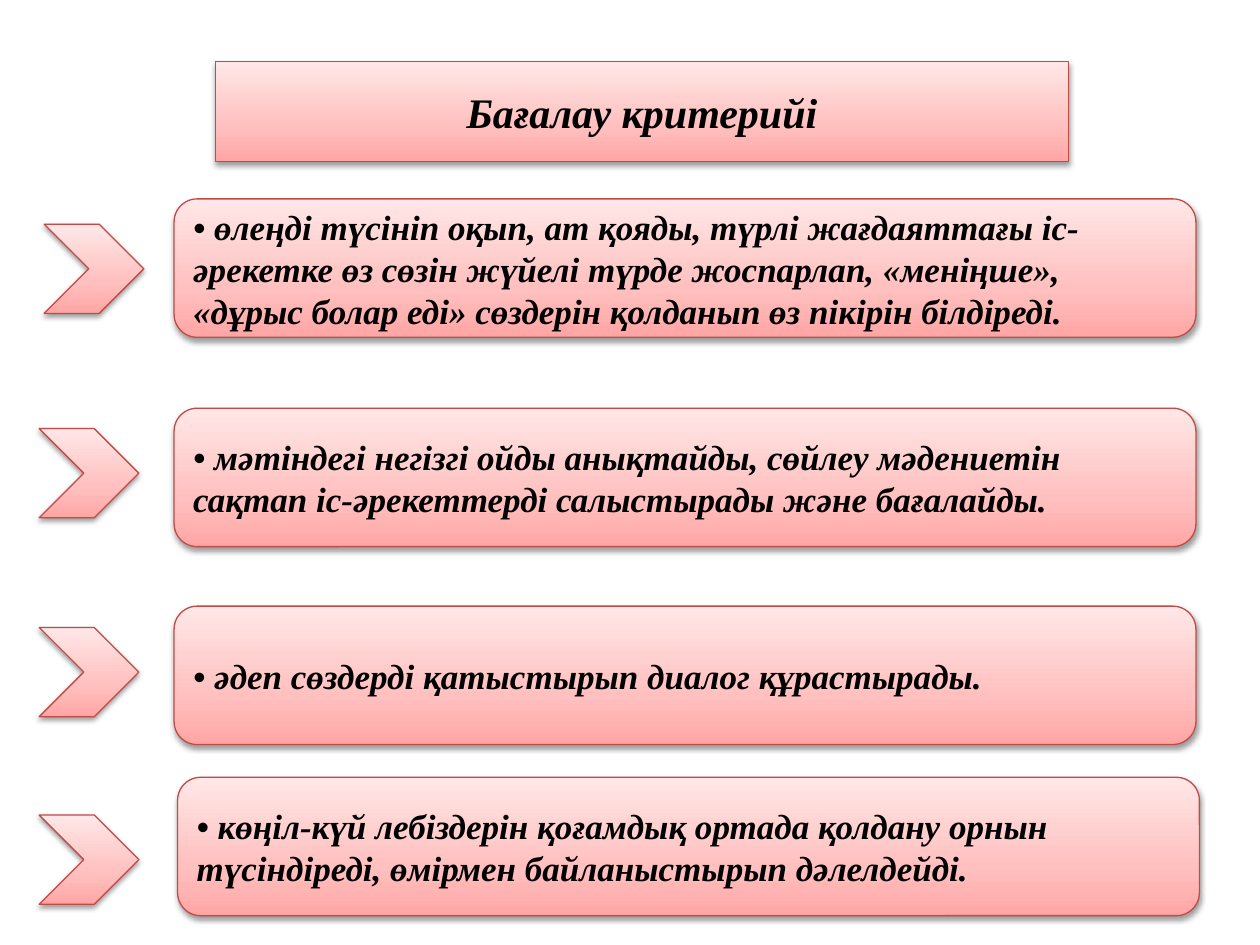
from dataclasses import dataclass

from lxml import etree
from pptx import Presentation
from pptx.dml.color import RGBColor
from pptx.enum.shapes import MSO_SHAPE
from pptx.enum.text import MSO_ANCHOR, PP_ALIGN
from pptx.oxml import parse_xml
from pptx.oxml.ns import nsdecls, qn
from pptx.util import Cm, Pt

CHEVRON, ROUNDED = MSO_SHAPE.CHEVRON, MSO_SHAPE.ROUNDED_RECTANGLE
MIDDLE = MSO_ANCHOR.MIDDLE
LEFT, CENTER = PP_ALIGN.LEFT, PP_ALIGN.CENTER
TITLE_ONLY = 5


@dataclass(frozen=True)
class Theme:
    font: str = "Times New Roman"
    title_size: int = 24
    body_size: int = 20
    text: str = "000000"
    line: str = "BF4C48"
    line_width: float = 0.75
    # Gradient stops from bottom to top: percent, colour
    stops: tuple = ((0, "FFA6A5"), (35, "FFC0BF"), (100, "FFE7E7"))


THEME = Theme()
TITLE = "Бағалау критерийі"
BOX_W, BOX_H = Cm(20.6), Cm(2.79)
CHEVRON_W, CHEVRON_H = Cm(2.01), Cm(1.8)

# Chevron left and top, box left and top (cm), text
CRITERIA = [
    (0.89, 4.52, 3.51, 4.01,
     "• өлеңді түсініп оқып, ат қояды, түрлі жағдаяттағы іс-әрекетке өз сөзін "
     "жүйелі түрде жоспарлап, «меніңше», «дұрыс болар еді» сөздерін қолданып "
     "өз пікірін білдіреді."),
    (0.79, 8.64, 3.51, 8.23,
     "• мәтіндегі негізгі ойды анықтайды, сөйлеу мәдениетін сақтап "
     "іс-әрекеттерді салыстырады және бағалайды."),
    (0.79, 12.65, 3.51, 12.22,
     "• әдеп сөздерді қатыстырып диалог құрастырады."),
    (0.79, 16.43, 3.58, 15.67,
     "• көңіл-күй лебіздерін қоғамдық ортада қолдану орнын түсіндіреді, "
     "өмірмен байланыстырып дәлелдейді."),
]


def style_shape(sp):
    """Give a shape the pink gradient, red outline and soft shadow."""
    sp.fill.gradient()
    sp.fill.gradient_angle = 90
    spPr = sp._element.spPr
    stops = spPr.find(qn("a:gradFill")).find(qn("a:gsLst"))
    for stop in list(stops):
        stops.remove(stop)
    for percent, color in THEME.stops:
        stop = etree.SubElement(stops, qn("a:gs"), pos=str(percent * 1000))
        etree.SubElement(stop, qn("a:srgbClr"), val=color)

    sp.line.color.rgb = RGBColor.from_string(THEME.line)
    sp.line.width = Pt(THEME.line_width)

    sp.shadow.inherit = False
    spPr.find(qn("a:effectLst")).append(parse_xml(
        f'<a:outerShdw {nsdecls("a")} blurRad="40000" dist="20000" '
        'dir="5400000" rotWithShape="0"><a:srgbClr val="000000">'
        '<a:alpha val="38000"/></a:srgbClr></a:outerShdw>'))


def write_text(sp, text, size, align):
    tf = sp.text_frame
    tf.word_wrap = True
    tf.vertical_anchor = MIDDLE
    p = tf.paragraphs[0]
    p.text = text
    p.alignment = align
    p.font.name = THEME.font
    p.font.size = Pt(size)
    p.font.bold = p.font.italic = True
    p.font.color.rgb = RGBColor.from_string(THEME.text)


def format_title(sp):
    """Turn the title placeholder into a scroll banner."""
    sp.left, sp.top, sp.width, sp.height = Cm(4.34), Cm(1.24), Cm(17.2), Cm(2.01)
    sp._element.spPr.append(parse_xml(
        f'<a:prstGeom {nsdecls("a")} prst="horizontalScroll"><a:avLst/></a:prstGeom>'))
    style_shape(sp)
    write_text(sp, TITLE, THEME.title_size, CENTER)


def add_chevron(slide, left, top):
    sp = slide.shapes.add_shape(CHEVRON, left, top, CHEVRON_W, CHEVRON_H)
    style_shape(sp)


def add_box(slide, left, top, text):
    sp = slide.shapes.add_shape(ROUNDED, left, top, BOX_W, BOX_H)
    style_shape(sp)
    write_text(sp, text, THEME.body_size, LEFT)


def main():
    prs = Presentation()
    prs.slide_width, prs.slide_height = Cm(25.4), Cm(19.05)
    slide = prs.slides.add_slide(prs.slide_layouts[TITLE_ONLY])

    # Title banner
    format_title(slide.shapes.title)

    # Criteria, each with its chevron
    for chevron_x, chevron_y, box_x, box_y, text in CRITERIA:
        add_chevron(slide, Cm(chevron_x), Cm(chevron_y))
        add_box(slide, Cm(box_x), Cm(box_y), text)

    prs.save("out.pptx")


if __name__ == "__main__":
    main()
